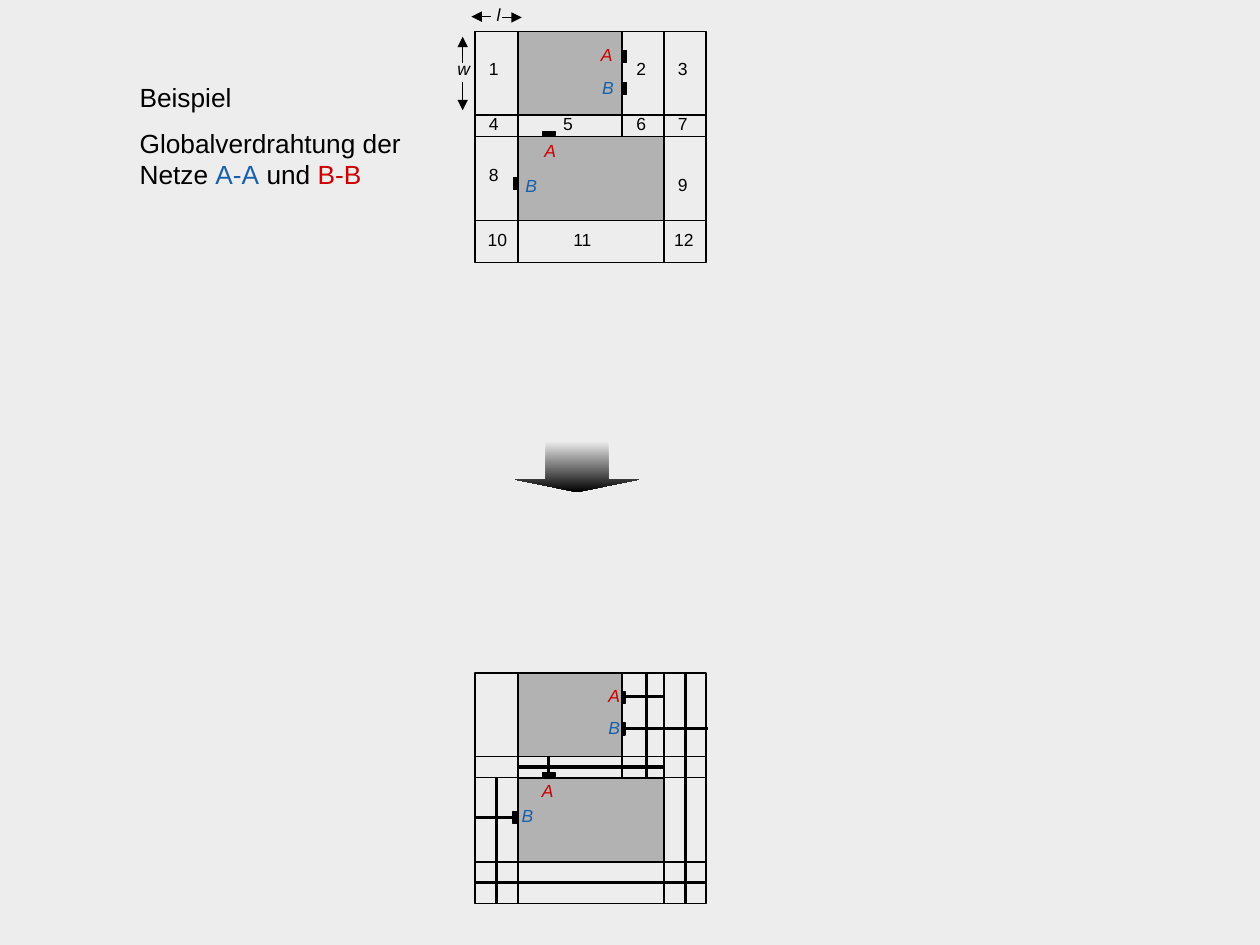
from pptx import Presentation
from pptx.dml.color import RGBColor
from pptx.enum.shapes import MSO_CONNECTOR as CONN, MSO_SHAPE as SHAPE
from pptx.oxml.ns import qn
from pptx.util import Pt
from lxml.etree import SubElement

BLACK = RGBColor(0x00, 0x00, 0x00)
PAPER = RGBColor(0xED, 0xED, 0xED)
GRAY = RGBColor(0xB2, 0xB2, 0xB2)
LIGHT = RGBColor(0xEA, 0xEA, 0xEA)
BLUE = RGBColor(0x18, 0x60, 0xAB)
RED = RGBColor(0xCC, 0x00, 0x00)

prs = Presentation()
prs.slide_width, prs.slide_height = Pt(720), Pt(540)
s = prs.slides.add_slide(prs.slide_layouts[6])
s.background.fill.solid()
s.background.fill.fore_color.rgb = PAPER


def add_box(x, y, w, h, color=None):
    sp = s.shapes.add_shape(SHAPE.RECTANGLE, Pt(x), Pt(y), Pt(w), Pt(h))
    sp.shadow.inherit = False
    sp.line.color.rgb = BLACK
    sp.line.width = Pt(0.75)
    if color is None:
        sp.fill.background()
    else:
        sp.fill.solid()
        sp.fill.fore_color.rgb = color


def add_line(x1, y1, x2, y2, width=0.75, arrow=False):
    c = s.shapes.add_connector(CONN.STRAIGHT, Pt(x1), Pt(y1), Pt(x2), Pt(y2))
    c.line.color.rgb = BLACK
    c.line.width = Pt(width)
    if arrow:
        SubElement(c.line._get_or_add_ln(), qn("a:tailEnd"), type="triangle")
    SubElement(c._element.spPr, qn("a:effectLst"))


tb = s.shapes.add_textbox(Pt(72.7), Pt(43.2), Pt(165), Pt(83.5))
tf = tb.text_frame
tf.word_wrap = True
tf.text = "Beispiel"
p = tf.add_paragraph()
p.text = "Globalverdrahtung der\vNetze "
p.space_before = Pt(8)
for text in ("A-A", " und ", "B-B"):
    p.add_run().text = text
for p in tf.paragraphs:
    p.font.size = Pt(15)
    for r in p.runs:
        r.font.size = Pt(15)
        r.font.name = "Arial"
        r.font.color.rgb = {"A-A": BLUE, "B-B": RED}.get(r.text, BLACK)

X0, X1, X2, X3, X4 = 271.5, 296, 355.5, 379.5, 403.5
Y1, Y2, Y3, Y4 = 47.75, 60, 108, 132
TOP_BEFORE, TOP_AFTER = 18, 384.5

for top in (TOP_BEFORE, TOP_AFTER):
    add_box(X1, top + Y2, X3 - X1, Y3 - Y2, GRAY)
    add_box(X1, top, X2 - X1, Y1, GRAY)
    add_box(X0, top, X4 - X0, Y4)
    for y in (Y1, Y2, Y3):
        add_line(X0, top + y, X4, top + y)
    for x, bottom in ((X1, Y4), (X2, Y2), (X3, Y4)):
        add_line(x, top, x, top + bottom)

wires = [
    (X2, 398.2, X3, 398.2),
    (369.2, TOP_AFTER, 369.2, TOP_AFTER + Y2),
    (X3, 438.3, X1, 438.3),
    (313.7, TOP_AFTER + Y1, 313.7, TOP_AFTER + Y2),
    (X2, 416.2, X4 + 1, 416.2),
    (391.5, TOP_AFTER, 391.5, TOP_AFTER + Y4),
    (X4, 504.2, X0, 504.2),
    (283.5, TOP_AFTER + Y4, 283.5, TOP_AFTER + Y2),
    (X1, 467.2, X0, 467.2),
]
for wire in wires:
    add_line(*wire, width=1.75)

side_pins = [(293.4, 101.3), (355.8, 28.7), (355.8, 47),
             (293.1, 463.6), (355, 395), (355, 413)]
for x, y in side_pins:
    add_box(x, y, 2.2, 7, BLACK)
for y in (75.3, 441.6):
    add_box(310.2, y, 7, 2.2, BLACK)

dimensions = [(264.4, 47, 264.4, 63), (286.9, 10, 298.2, 10),
              (280.7, 9.5, 269.4, 9.5), (264.4, 36, 264.4, 21)]
for dimension in dimensions:
    add_line(*dimension, arrow=True)

labels = [
    ("l", 275.8, -1.4), ("w", 253.4, 29.5),
    ("1", 271.5, 29.5), ("2", 355.7, 29.5), ("3", 379.5, 29.5),
    ("4", 271.5, 61.2), ("5", 313.9, 61.2), ("6", 355.7, 61.2), ("7", 379.5, 61.2),
    ("8", 271.5, 90), ("9", 379.5, 95.8),
    ("10", 270.7, 127.4), ("11", 319.7, 127.4), ("12", 377.3, 127.4),
    ("A", 335.5, 21.6), ("B", 336.2, 40.3), ("A", 303.1, 76.3), ("B", 292.3, 96.5),
    ("A", 339.8, 388.1), ("B", 339.8, 406.1), ("A", 301.7, 442.1), ("B", 290.2, 456.5),
]
for text, x, y in labels:
    tb = s.shapes.add_textbox(Pt(x), Pt(y), Pt(30.2), Pt(19.4))
    tf = tb.text_frame
    tf.word_wrap = True
    tf.margin_left = tf.margin_right = Pt(7.9)
    tf.text = text
    r = tf.paragraphs[0].runs[0]
    r.font.size = Pt(10)
    r.font.name = "Arial"
    r.font.italic = text.isalpha()
    r.font.color.rgb = {"A": RED, "B": BLUE}.get(text, BLACK)

sp = s.shapes.add_shape(SHAPE.DOWN_ARROW, Pt(294.1), Pt(252.4), Pt(71.3), Pt(28.8))
sp.shadow.inherit = False
sp.adjustments[0], sp.adjustments[1] = 0.5, 0.25
sp.line.fill.background()
sp.fill.gradient()
sp.fill.gradient_angle = 270
for stop, position, color in zip(sp.fill.gradient_stops, (0, 1), (LIGHT, BLACK)):
    stop.position = position
    stop.color.rgb = color

prs.save("out.pptx")
